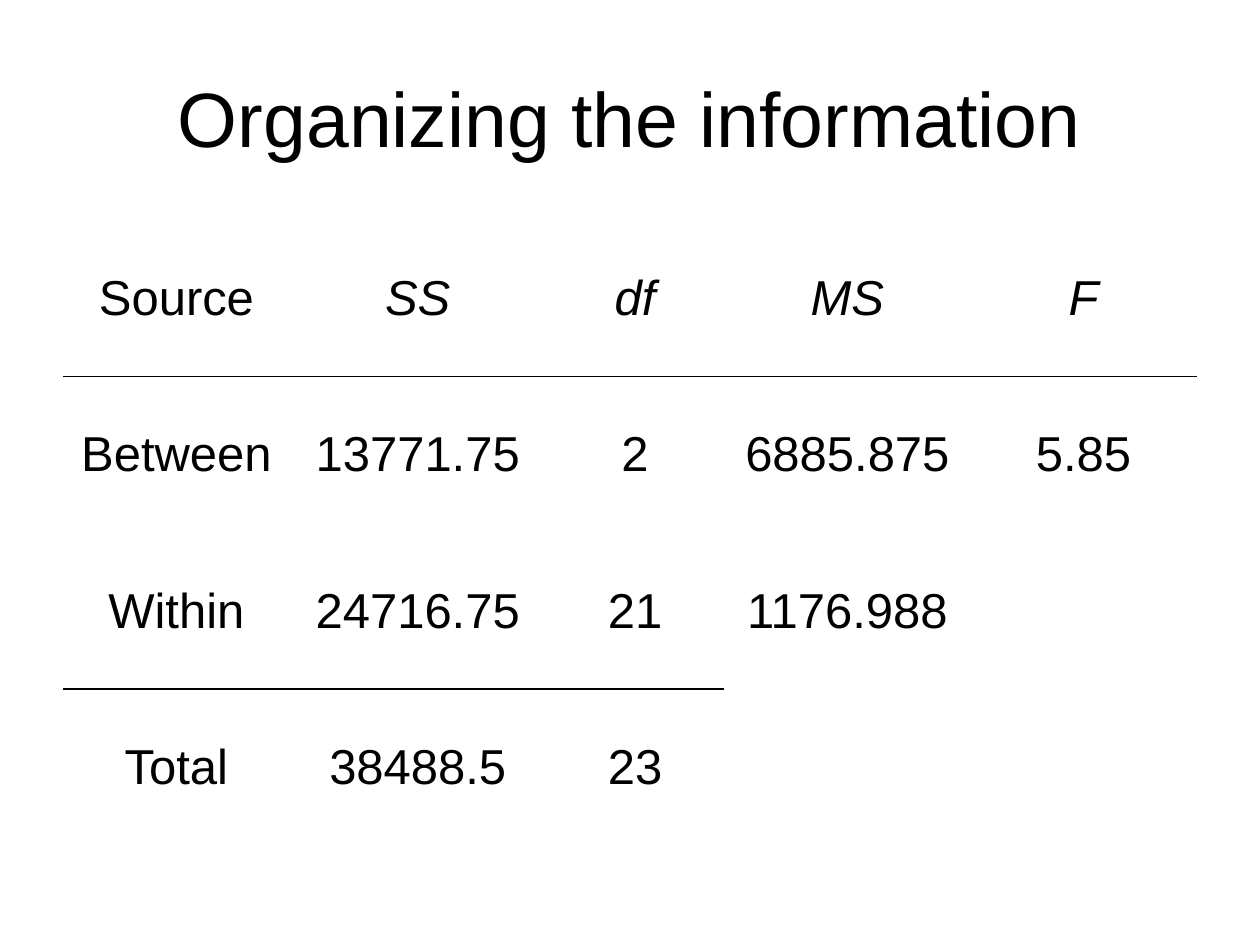
from dataclasses import dataclass

from lxml import etree
from pptx import Presentation
from pptx import util as u
from pptx.dml.color import RGBColor
from pptx.enum import text
from pptx.oxml import ns


@dataclass(frozen=True)
class Theme:
    font: str = "Arial"
    ink: str = "000000"
    title_size: int = 44
    table_size: int = 28
    rule_width: int = 1


class SlideBuilder:
    def __init__(self, slide, theme):
        self.slide = slide
        self.theme = theme

    def centered_text(self, frame, wording, size, italic=False):
        paragraph = frame.paragraphs[0]
        paragraph.text = wording
        paragraph.alignment = text.PP_ALIGN.CENTER
        paragraph.font.name = self.theme.font
        paragraph.font.size = u.Pt(size)
        paragraph.font.italic = italic
        paragraph.font.color.rgb = RGBColor.from_string(self.theme.ink)
        return paragraph

    def title(self, wording, left, top, width, height):
        heading = self.slide.shapes.add_textbox(
            u.Inches(left), u.Inches(top), u.Inches(width), u.Inches(height))
        frame = heading.text_frame
        frame.word_wrap = True
        frame.vertical_anchor = text.MSO_ANCHOR.MIDDLE
        self.centered_text(frame, wording, self.theme.title_size)

    def borders(self, cell, ruled_sides):
        properties = cell._tc.get_or_add_tcPr()
        for side in "LRTB":
            line = etree.SubElement(properties, ns.qn(f"a:ln{side}"))
            if side in ruled_sides:
                line.set("w", str(u.Pt(self.theme.rule_width)))
                ink = etree.SubElement(line, ns.qn("a:solidFill"))
                etree.SubElement(ink, ns.qn("a:srgbClr"), val=self.theme.ink)
            else:
                etree.SubElement(line, ns.qn("a:noFill"))

    def table(self, rows, left, top, column_widths, row_height, rule_lengths):
        grid = self.slide.shapes.add_table(
            len(rows), len(column_widths), u.Inches(left), u.Inches(top),
            u.Inches(sum(column_widths)), u.Inches(row_height * len(rows))).table
        grid.first_row = False
        grid.horz_banding = False
        for column, width in zip(grid.columns, column_widths):
            column.width = u.Inches(width)
        for r, values in enumerate(rows):
            grid.rows[r].height = u.Inches(row_height)
            for c in range(len(column_widths)):
                cell = grid.cell(r, c)
                cell.vertical_anchor = text.MSO_ANCHOR.MIDDLE
                ruled_sides = ""
                if c < rule_lengths.get(r - 1, 0):
                    ruled_sides += "T"
                if c < rule_lengths.get(r, 0):
                    ruled_sides += "B"
                self.borders(cell, ruled_sides)
                cell.fill.background()
                if c < len(values):
                    statistic_symbol = r == 0 and c > 0
                    entry = self.centered_text(cell.text_frame, values[c],
                                               self.theme.table_size, statistic_symbol)
                    entry.space_before = u.Pt(self.theme.table_size * 0.2)


def main():
    deck = Presentation()
    deck.slide_width, deck.slide_height = u.Inches(10), u.Inches(7.5)
    builder = SlideBuilder(deck.slides.add_slide(deck.slide_layouts[6]), Theme())
    builder.title("Organizing the information", 0.5, 0.3, 9, 1.25)
    anova_rows = [
        ["Source", "SS", "df", "MS", "F"],
        ["Between", "13771.75", "2", "6885.875", "5.85"],
        ["Within", "24716.75", "21", "1176.988"],
        ["Total", "38488.5", "23"],
    ]
    builder.table(anova_rows, 0.5, 1.75, [1.8, 2.03, 1.42, 1.95, 1.8], 1.24,
                  rule_lengths={0: 5, 2: 3})
    deck.save("out.pptx")


if __name__ == "__main__":
    main()
